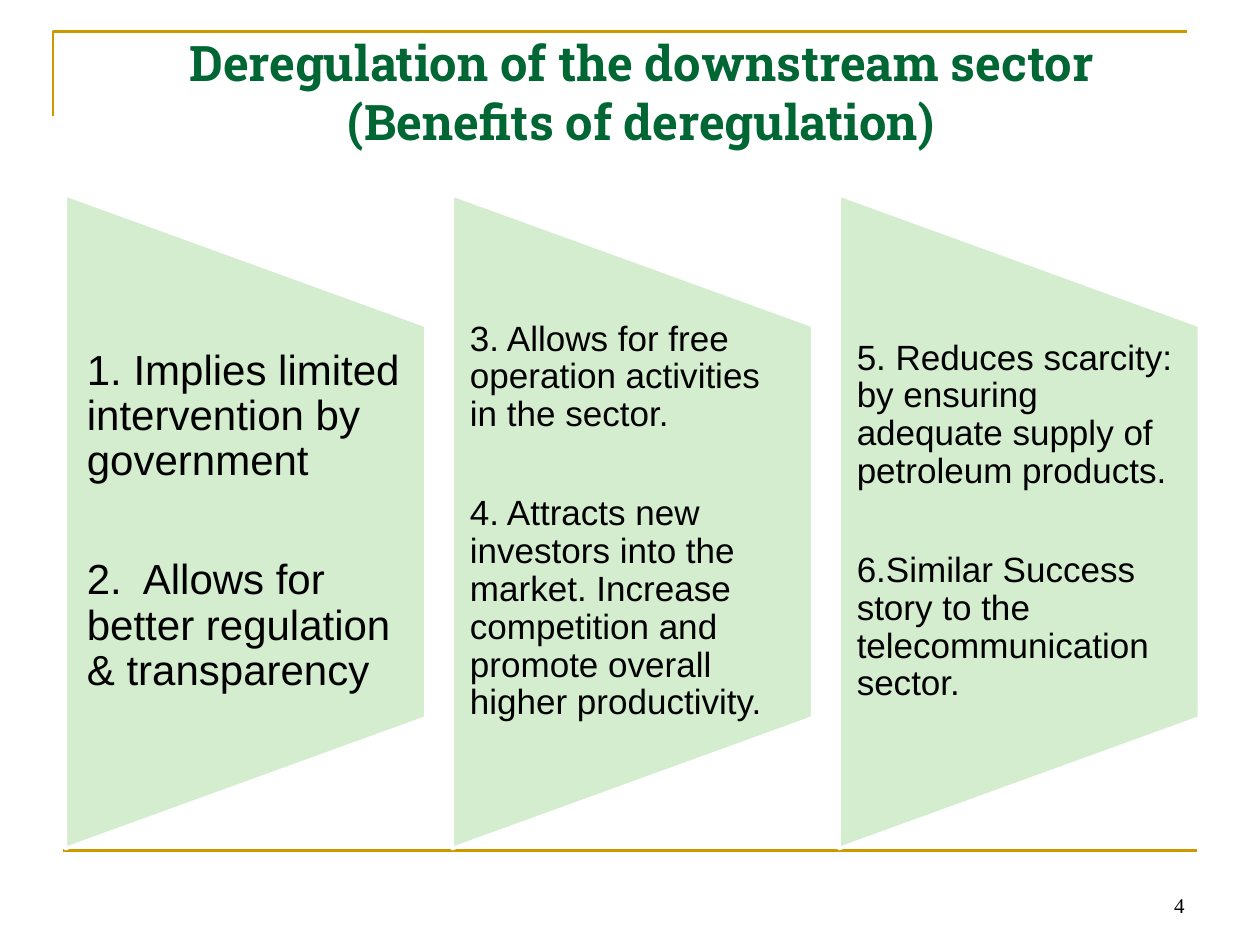
from pptx import Presentation, util as u
from pptx.dml.color import RGBColor
from pptx.enum import shapes, text
from pptx.oxml.ns import qn
from lxml import etree

COLORS = {"gold": "CC9900", "title": "006633", "panel": "D3EDCE",
          "edge": "FFFFFF", "ink": "000000"}
ANCHOR, ALIGN = text.MSO_ANCHOR, text.PP_ALIGN

prs = Presentation()
prs.slide_width, prs.slide_height = u.Inches(10), u.Inches(7.5)
slide = prs.slides.add_slide(prs.slide_layouts[5])
sp_tree = slide.shapes


def rgb(name):
    return RGBColor.from_string(COLORS[name])


def write(sp, paragraphs, size, font="Arial", color="ink", bold=False,
          align=ALIGN.LEFT, anchor=ANCHOR.MIDDLE, inset=(0.1, 0.05),
          spacing=1.0, gap=0):
    tf = sp.text_frame
    tf.word_wrap = True
    tf.auto_size = text.MSO_AUTO_SIZE.NONE
    tf.vertical_anchor = anchor
    tf.margin_left = tf.margin_right = u.Inches(inset[0])
    tf.margin_top = tf.margin_bottom = u.Inches(inset[1])
    for i, line in enumerate(paragraphs):
        p = tf.add_paragraph() if i else tf.paragraphs[0]
        p.alignment = align
        p.line_spacing = spacing
        p.space_before = u.Pt(gap if i else 0)
        r = p.add_run()
        r.text = line
        r.font.name, r.font.size, r.font.bold = font, u.Pt(size), bold
        r.font.color.rgb = rgb(color)


fb = sp_tree.build_freeform(u.Inches(0.42), u.Inches(0.92))
fb.add_line_segments([(u.Inches(0.42), u.Inches(0.25)),
                      (u.Inches(9.42), u.Inches(0.25))], close=False)
corner = fb.convert_to_shape()
corner.fill.background()
corner.shadow.inherit = False
rule = sp_tree.add_connector(shapes.MSO_CONNECTOR.STRAIGHT, u.Inches(0.5),
                             u.Inches(6.75), u.Inches(9.5), u.Inches(6.75))
for sp in (corner, rule):
    sp.line.color.rgb = rgb("gold")
    sp.line.width = u.Pt(1.5)
etree.SubElement(rule._element.spPr, qn("a:effectLst"))

title = sp_tree.title
title.left, title.top = u.Inches(0.59), u.Inches(0.21)
title.width, title.height = u.Inches(9), u.Inches(1.25)
write(title, ["Deregulation of the downstream sector", "(Benefits of deregulation)"],
      28, font="Roboto Slab", color="title", bold=True, align=ALIGN.CENTER,
      anchor=ANCHOR.TOP)

benefits = [
    (24, 0.17, ["1. Implies limited intervention by government",
                "2.  Allows for better regulation & transparency"]),
    (20, 0.14, ["3. Allows for free operation activities in the sector.",
                "4. Attracts new investors into the market. Increase competition "
                "and promote overall higher productivity."]),
    (20, 0.14, ["5. Reduces scarcity: by ensuring adequate supply of petroleum products.",
                "6.Similar Success story to the telecommunication sector."]),
]
left, pitch, middle = 0.52, 3.07, 4.14
col_w, panel_h, text_h = 2.86, 5.19, 3.11

for col, (size, inset, items) in enumerate(benefits):
    x = left + col * pitch
    panel = sp_tree.add_shape(
        shapes.MSO_SHAPE.FLOWCHART_MANUAL_OPERATION,
        u.Inches(x + (col_w - panel_h) / 2), u.Inches(middle - col_w / 2),
        u.Inches(panel_h), u.Inches(col_w))
    panel.rotation = 270
    panel.shadow.inherit = False
    panel.fill.solid()
    panel.fill.fore_color.rgb = rgb("panel")
    panel.line.color.rgb = rgb("edge")
    panel.line.width = u.Pt(2)
    box = sp_tree.add_textbox(u.Inches(x), u.Inches(middle - text_h / 2),
                              u.Inches(col_w), u.Inches(text_h))
    write(box, items, size, inset=(inset, 0), spacing=0.9, gap=size * 1.75)

number = sp_tree.add_textbox(u.Inches(7.17), u.Inches(6.83),
                             u.Inches(2.33), u.Inches(0.5))
write(number, ["4"], 12, font="Times New Roman", align=ALIGN.RIGHT,
      anchor=ANCHOR.BOTTOM)

prs.save("out.pptx")
